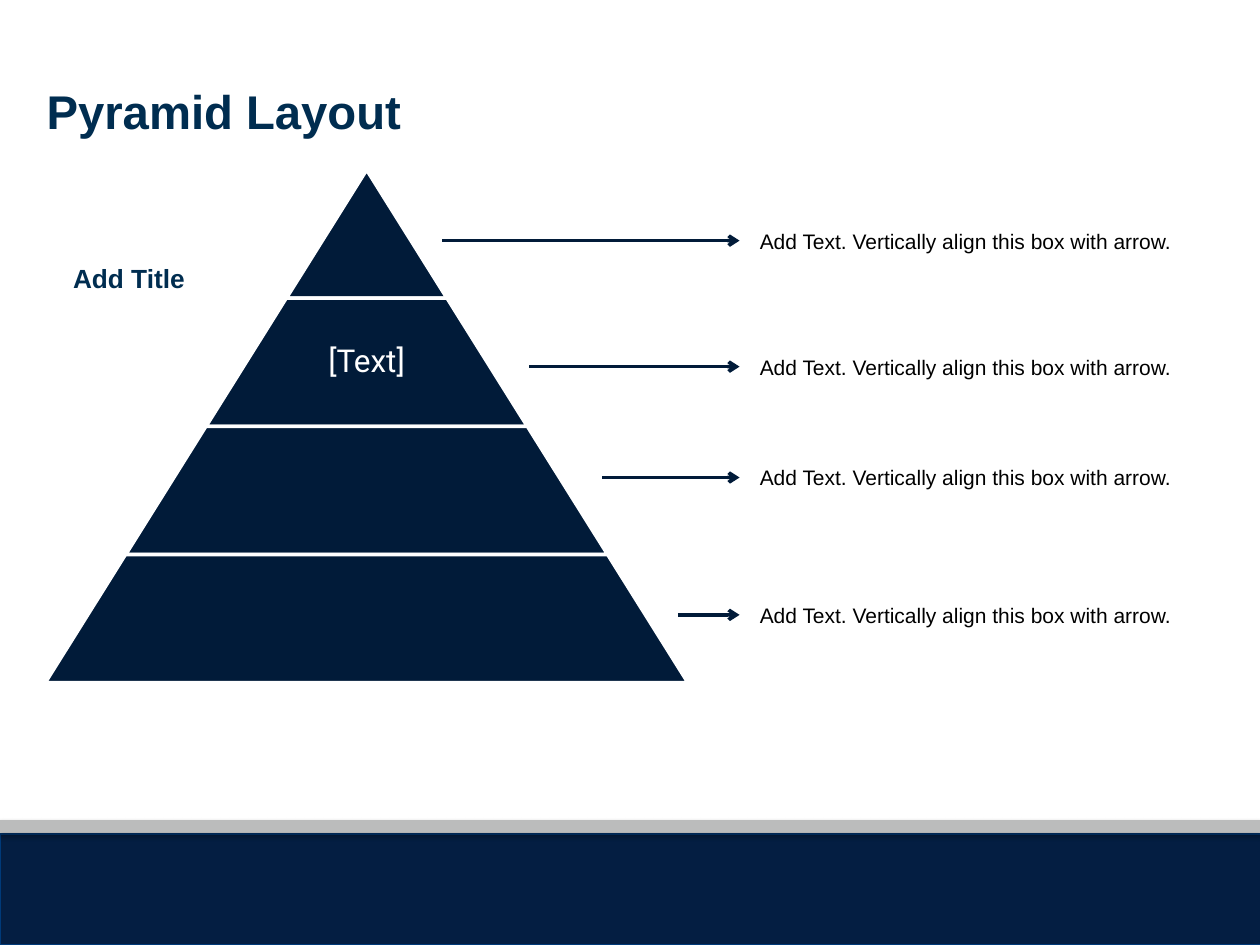
from lxml import etree
from pptx import Presentation
from pptx.dml.color import RGBColor
from pptx.enum import shapes, text
from pptx.oxml import ns, parse_xml
from pptx.util import Inches, Pt

INK = {
    "navy": "011B39",
    "foot": "041E42",
    "edge": "003A79",
    "gray": "BBBCBC",
    "title": "002D50",
    "black": "000000",
    "white": "FFFFFF",
}
NOTE = "Add Text. Vertically align this box with arrow."
ROWS = [(3.51, 1.91), (4.2, 2.91), (4.78, 3.79), (5.38, 4.88)]
MID, TOP, STEP, RISE = 2.91, 1.35, 1.275, 1.017
PAD = (0.08, 0.04, 0.08, 0.04)


def color(name):
    return RGBColor.from_string(INK[name])


def block(slide, kind, area, fill, line=None, width=0):
    shape = slide.shapes.add_shape(kind, *map(Inches, area))
    shape.shadow.inherit = False
    shape.fill.solid()
    shape.fill.fore_color.rgb = color(fill)
    if line:
        shape.line.color.rgb = color(line)
        shape.line.width = Pt(width)
    else:
        shape.line.fill.background()
    return shape


def shade(shape):
    effect = shape._element.spPr.find(ns.qn("a:effectLst"))
    effect.append(parse_xml(
        f'<a:outerShdw {ns.nsdecls("a")} blurRad="{Pt(3.1)}" dist="{Pt(1.8)}" '
        'dir="5400000" rotWithShape="0"><a:srgbClr val="000000">'
        '<a:alpha val="35000"/></a:srgbClr></a:outerShdw>'))


def bar(slide, area, fill, line=None):
    shade(block(slide, shapes.MSO_SHAPE.RECTANGLE, area, fill, line, 0.75))


def write(box, words, size, ink, bold=False, face="Arial", pad=PAD,
          align=text.PP_ALIGN.LEFT, anchor=text.MSO_ANCHOR.MIDDLE):
    frame = box.text_frame
    frame.word_wrap = True
    frame.auto_size = text.MSO_AUTO_SIZE.NONE
    frame.vertical_anchor = anchor
    (frame.margin_left, frame.margin_top,
     frame.margin_right, frame.margin_bottom) = map(Inches, pad)
    para = frame.paragraphs[0]
    para.alignment = align
    run = para.add_run()
    run.text = words
    run.font.name = face
    run.font.size = Pt(size)
    run.font.bold = bold
    run.font.color.rgb = color(ink)
    return para


def label(slide, area, *args, **style):
    box = slide.shapes.add_textbox(*map(Inches, area))
    return write(box, *args, **style)


def head(slide):
    title = slide.shapes.title
    title.left, title.top, title.width, title.height = map(
        Inches, (0.29, 0.61, 9, 0.65))
    write(title, "Pyramid Layout", 27, "title", True,
          anchor=text.MSO_ANCHOR.TOP)


def tier(slide, rank):
    wide = STEP * (rank + 1)
    area = (MID - wide / 2, TOP + RISE * rank, wide, RISE)
    shape = block(slide, shapes.MSO_SHAPE.TRAPEZOID, area, "navy", "white", 2)
    shape.adjustments[0] = 0.626


def arrow(slide, start, y):
    line = slide.shapes.add_connector(
        shapes.MSO_CONNECTOR.STRAIGHT,
        *map(Inches, (start, y, 5.87, y)))
    line.line.color.rgb = color("navy")
    line.line.width = Pt(2)
    etree.SubElement(line.line._get_or_add_ln(), ns.qn("a:tailEnd"),
                     type="arrow")
    etree.SubElement(line._element.spPr, ns.qn("a:effectLst"))


def main():
    deck = Presentation()
    deck.slide_width, deck.slide_height = Inches(10), Inches(7.5)
    slide = deck.slides.add_slide(deck.slide_layouts[5])
    bar(slide, (0, 6.62, 10.02, 0.88), "foot", "edge")
    bar(slide, (0, 6.51, 10, 0.1), "gray")
    head(slide)
    label(slide, (0.5, 1.74, 1.64, 0.93), "Add Title", 15, "title", True)
    for rank in range(4):
        tier(slide, rank)
    para = label(slide, (2.08, TOP + RISE, 1.66, RISE), "[Text]", 18, "white",
                 face="Roboto", pad=[0.03] * 4, align=text.PP_ALIGN.CENTER)
    para.line_spacing = 0.9
    for start, y in ROWS:
        arrow(slide, start, y)
        label(slide, (5.95, y - 0.29, 4.01, 0.58), NOTE, 12, "black")
    deck.save("out.pptx")


if __name__ == "__main__":
    main()
